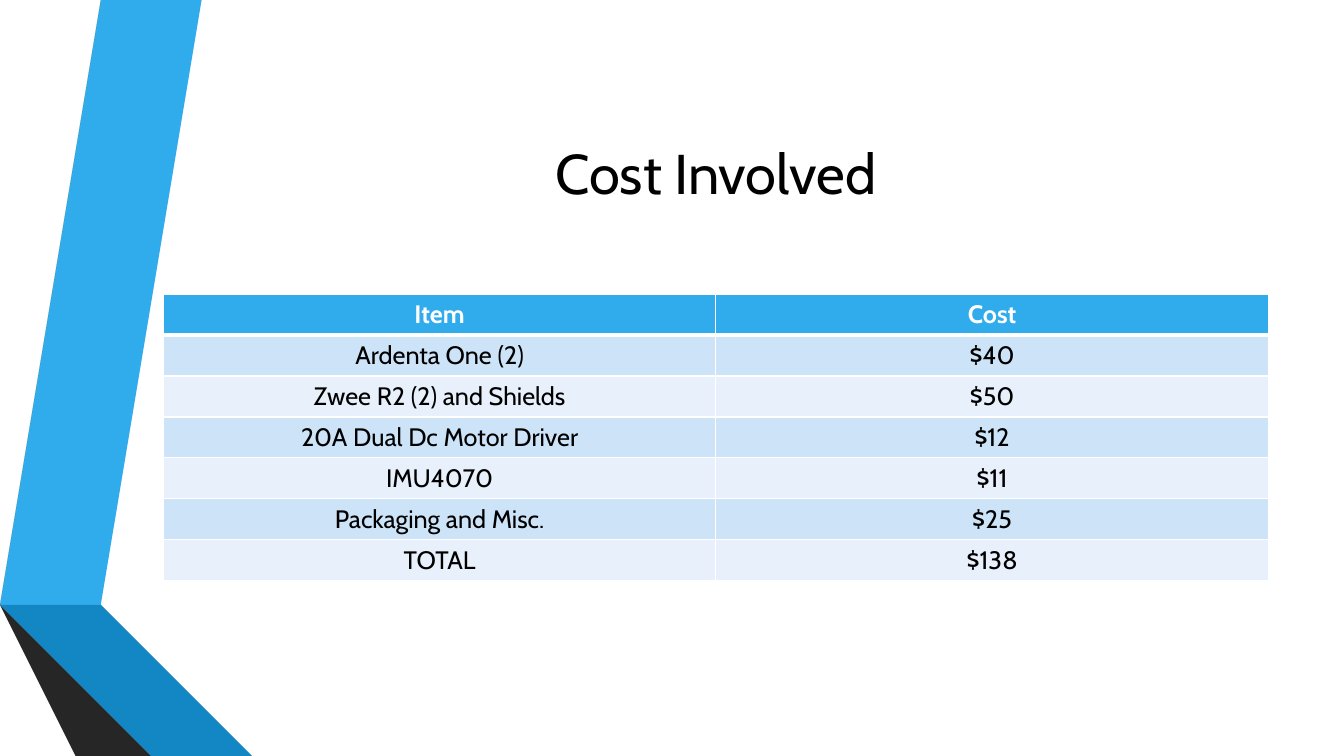
"""Build the project cost slide with its folded ribbons and cost table."""
import pptx
import pptx.dml.color
import pptx.enum.text
import pptx.oxml
import pptx.oxml.ns
import pptx.util

COSTS = [
    ("Item", "Cost"),
    ("Ardenta One (2)", "$40"),
    ("Zwee R2 (2) and Shields", "$50"),
    ("20A Dual Dc Motor Driver", "$12"),
    ("IMU4070", "$11"),
    ("Packaging and Misc.", "$25"),
    ("TOTAL", "$138"),
]
HEADING = "Cost Involved"
FONT = "Cabin"
COLORS = {
    "blue": "30ACEC", "blue fold": "1287C3", "blue edge": "0C5A82",
    "gray": "595959", "gray fold": "404040", "gray edge": "262626",
    "odd row": "CDE3F8", "even row": "E8F1FB",
    "white": "FFFFFF", "black": "000000",
}
RIBBONS = [
    ("blue", [(0.5, 5.78), (0.77, 5.83), (1.73, 0), (1.45, 0)]),
    ("gray", [(1.39, 0), (1.11, 0), (0.16, 5.73), (0.44, 5.77)]),
    ("gray edge", [(0.16, 5.73), (1.45, 7.5), (1.51, 7.5)]),
    ("blue edge", [(0.5, 5.79), (2.08, 7.5), (2.14, 7.5)]),
    ("blue fold", [(0.5, 5.79), (2.14, 7.5), (2.83, 7.5), (0.77, 5.83), (0.5, 5.78)]),
    ("gray fold", [(2.02, 7.5), (0.48, 5.83), (0.43, 5.78), (0.44, 5.77),
                   (0.16, 5.73), (1.51, 7.5)]),
]
WIDTH, HEIGHT = 13.33, 7.5
LEFT, CONTENT_WIDTH = 1.62, 10.96
HEADING_TOP, HEADING_HEIGHT = HEIGHT * 0.1, 1.92
TABLE_TOP, TABLE_HEIGHT = 2.92, 2.84
RULES = {"lnL": 1, "lnR": 1, "lnT": 1, "lnB": 1}
HEADER_RULES = {**RULES, "lnB": 3}
FIRST_ROW_RULES = {**RULES, "lnT": 3}


def rgb(name):
    return pptx.dml.color.RGBColor.from_string(COLORS[name])


def paint(part, color):
    part.fill.solid()
    part.fill.fore_color.rgb = rgb(color)


def write(frame, text, size, color="black", bold=False):
    paragraph = frame.paragraphs[0]
    paragraph.alignment = pptx.enum.text.PP_ALIGN.CENTER
    wording = paragraph.add_run()
    wording.text = text
    style = {"name": FONT, "size": pptx.util.Pt(size), "bold": bold}
    for attribute, value in style.items():
        setattr(wording.font, attribute, value)
    wording.font.color.rgb = rgb(color)


def rule_cell(cell, rules):
    properties = cell._tc.get_or_add_tcPr()
    for position, (side, points) in enumerate(rules.items()):
        properties.insert(position, pptx.oxml.parse_xml(
            f'<a:{side} {pptx.oxml.ns.nsdecls("a")} w="{pptx.util.Pt(points)}">'
            f'<a:solidFill><a:srgbClr val="{COLORS["white"]}"/></a:solidFill></a:{side}>'))


def add_ribbons(slide):
    for color, corners in RIBBONS:
        builder = slide.shapes.build_freeform(*corners[0], scale=pptx.util.Inches(1))
        builder.add_line_segments(corners[1:], close=True)
        ribbon = builder.convert_to_shape()
        ribbon.shadow.inherit = False
        ribbon.line.fill.background()
        paint(ribbon, color)


def add_heading(slide):
    heading = slide.shapes.add_textbox(
        *map(pptx.util.Inches, (LEFT, HEADING_TOP, CONTENT_WIDTH, HEADING_HEIGHT)))
    frame = heading.text_frame
    frame.word_wrap = True
    frame.vertical_anchor = pptx.enum.text.MSO_ANCHOR.MIDDLE
    write(frame, HEADING, 40)


def add_costs(slide):
    costs = slide.shapes.add_table(
        len(COSTS), len(COSTS[0]),
        *map(pptx.util.Inches, (LEFT, TABLE_TOP, CONTENT_WIDTH, TABLE_HEIGHT))).table
    for row, entries in enumerate(COSTS):
        header = row == 0
        fill = "blue" if header else "odd row" if row % 2 else "even row"
        rules = HEADER_RULES if header else FIRST_ROW_RULES if row == 1 else RULES
        for column, text in enumerate(entries):
            cell = costs.cell(row, column)
            paint(cell, fill)
            rule_cell(cell, rules)
            write(cell.text_frame, text, 18, "white" if header else "black", header)


def main():
    deck = pptx.Presentation()
    deck.slide_width = pptx.util.Inches(WIDTH)
    deck.slide_height = pptx.util.Inches(HEIGHT)
    slide = deck.slides.add_slide(deck.slide_layouts[6])
    paint(slide.background, "white")
    add_ribbons(slide)
    add_heading(slide)
    add_costs(slide)
    deck.save("out.pptx")


if __name__ == "__main__":
    main()
